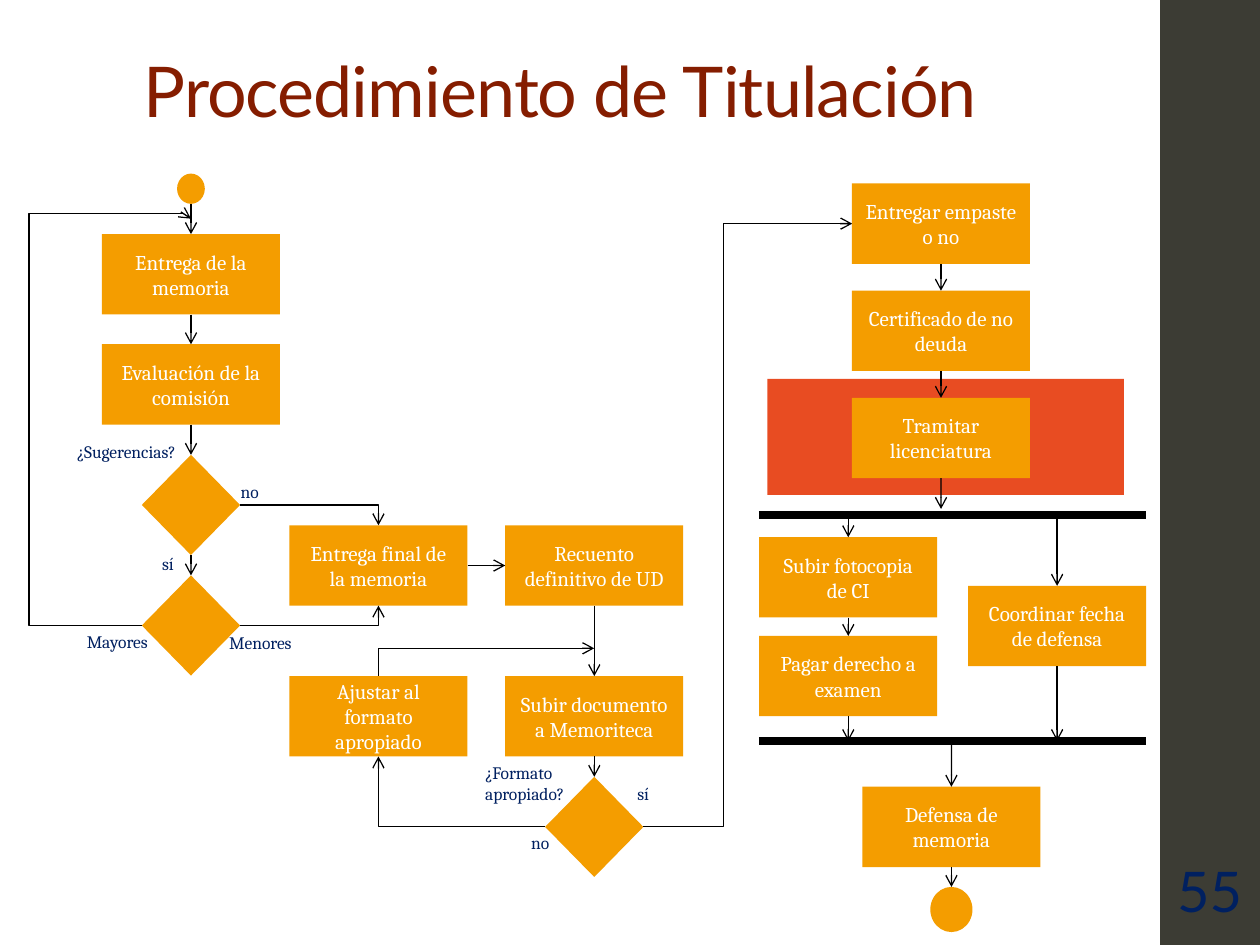
"""Build the degree procedure flowchart slide."""
from dataclasses import dataclass

import pptx
import pptx.dml.color
import pptx.enum.shapes
import pptx.enum.text
import pptx.oxml
import pptx.oxml.ns
import pptx.util

Cm, Pt = pptx.util.Cm, pptx.util.Pt
SHAPES = pptx.enum.shapes.MSO_SHAPE
CONNECTORS = pptx.enum.shapes.MSO_CONNECTOR
ANCHOR = pptx.enum.text.MSO_ANCHOR
ALIGN = pptx.enum.text.PP_ALIGN
AUTO_SIZE = pptx.enum.text.MSO_AUTO_SIZE

COLOURS = {"bar": "3C3C34", "title": "851D00", "highlight": "E84C22", "node": "F49D00",
           "label": "002060", "line": "000000", "white": "FFFFFF"}
FONTS = {
    "title": {"size": Pt(40), "name": "Lato"},
    "number": {"size": Pt(32), "name": "Lato"},
    "node": {"size": Pt(12), "name": "Cambria"},
    "label": {"size": Pt(10), "name": "Cambria"},
}
TOP, LEFT, BOTTOM, RIGHT = range(4)
BOX, DIAMOND = (3.59, 1.62), (1.98, 2.02)
MEMORY, FINAL, COUNT, PAPERWORK, EXAM, DATE, DEFENCE = 3.85, 7.63, 11.98, 18.97, 17.1, 21.31, 19.18
FORK, JOIN = 10.39, 14.94


@dataclass
class Node:
    name: str
    centre: float
    top: float
    text: str = ""
    kind: object = SHAPES.RECTANGLE
    size: tuple = BOX


@dataclass
class Label:
    text: str
    left: float
    top: float
    width: float
    height: float = 0.69
    wrap: bool = False


@dataclass
class Straight:
    begin: object
    end: object
    sides: tuple = (BOTTOM, TOP)


@dataclass
class Bent:
    preset: str
    begin: tuple
    end: tuple
    adjustments: tuple = ()
    arrow_at: str = "tailEnd"


NODES = [
    Node("submit", MEMORY, 4.72, "Entrega de la memoria"),
    Node("review", MEMORY, 6.94, "Evaluación de la comisión"),
    Node("suggestions", MEMORY, 9.17, kind=SHAPES.DIAMOND, size=DIAMOND),
    Node("severity", MEMORY, 11.6, kind=SHAPES.DIAMOND, size=DIAMOND),
    Node("start", MEMORY, 3.5, kind=SHAPES.OVAL, size=(0.56, 0.61)),
    Node("final", FINAL, 10.59, "Entrega final de la memoria"),
    Node("count", COUNT, 10.59, "Recuento definitivo de UD"),
    Node("degree", PAPERWORK, 8.02, "Tramitar licenciatura"),
    Node("upload", COUNT, 13.63, "Subir documento a Memoriteca"),
    Node("adjust", FINAL, 13.63, "Ajustar al formato apropiado"),
    Node("format", COUNT, 15.66, kind=SHAPES.DIAMOND, size=DIAMOND),
    Node("certificate", PAPERWORK, 5.86, "Certificado de no deuda"),
    Node("copy", EXAM, 10.83, "Subir fotocopia de CI"),
    Node("fee", EXAM, 12.82, "Pagar derecho a examen"),
    Node("binding", PAPERWORK, 3.7, "Entregar empaste o no"),
    Node("date", DATE, 11.81, "Coordinar fecha de defensa"),
    Node("defence", DEFENCE, 15.86, "Defensa de memoria"),
    Node("finish", DEFENCE, 17.88, kind=SHAPES.OVAL, size=(0.85, 0.91)),
    Node("finish core", DEFENCE, 17.98, kind=SHAPES.OVAL, size=(0.64, 0.71)),
]
LABELS = [
    Label("¿Sugerencias?", 1.3, 8.76, 2.87),
    Label("sí", 3.02, 11.02, 0.79),
    Label("Mayores", 1.5, 12.6, 1.93),
    Label("Menores", 4.37, 12.62, 1.93),
    Label("no", 4.6, 9.58, 0.91),
    Label("sí", 12.6, 15.65, 0.79),
    Label("no", 10.46, 16.64, 0.91),
    Label("¿Formato apropiado?", 9.53, 15.24, 2.36, 1.12, True),
]
STRAIGHTS = [
    Straight((MEMORY, 4.11), "submit"),
    Straight("submit", "review"),
    Straight("review", "suggestions"),
    Straight("suggestions", "severity"),
    Straight("final", "count", (RIGHT, LEFT)),
    Straight("count", "upload"),
    Straight("upload", "format"),
    Straight("binding", "certificate"),
    Straight("certificate", "degree"),
    Straight("degree", (PAPERWORK, 10.26)),
    Straight((EXAM, FORK), "copy"),
    Straight((DATE, FORK), "date"),
    Straight("copy", "fee"),
    Straight("fee", (EXAM, JOIN)),
    Straight("date", (DATE, JOIN)),
    Straight((DEFENCE, JOIN), "defence"),
    Straight("defence", "finish"),
]
BENTS = [
    Bent("bentConnector4", (2.86, 12.61), (MEMORY, 4.41), (-229500, 101200)),
    Bent("bentConnector2", (4.84, 10.18), (FINAL, 10.59)),
    Bent("bentConnector2", (4.84, 12.61), (FINAL, 12.21)),
    Bent("bentConnector2", (10.99, 16.67), (FINAL, 15.25)),
    Bent("bentConnector2", (COUNT, 13.07), (FINAL, 13.63), arrow_at="headEnd"),
    Bent("bentConnector3", (12.97, 16.67), (17.18, 4.51), (38400,)),
]


def colour(name: str):
    """Return a named colour."""
    return pptx.dml.color.RGBColor.from_string(COLOURS[name])


def write(frame, text: str, style: str, tint: str):
    """Write one styled paragraph and return it."""
    para = frame.paragraphs[0]
    span = para.add_run()
    span.text = text
    for key, value in FONTS[style].items():
        setattr(span.font, key, value)
    span.font.color.rgb = colour(tint)
    return para


def add_block(page, kind, left: float, top: float, size: tuple, tint: str):
    """Add a flat filled shape."""
    block = page.shapes.add_shape(kind, Cm(left), Cm(top), Cm(size[0]), Cm(size[1]))
    block.shadow.inherit = False
    block.fill.solid()
    block.fill.fore_color.rgb = colour(tint)
    block.line.fill.background()
    return block


def add_node(page, node: Node):
    """Add one flowchart step."""
    block = add_block(page, node.kind, node.centre - node.size[0] / 2, node.top, node.size, "node")
    if node.text:
        block.text_frame.vertical_anchor = ANCHOR.MIDDLE
        write(block.text_frame, node.text, "node", "white").alignment = ALIGN.CENTER
    return block


def add_label(page, label: Label, style: str = "label") -> None:
    """Add a free-standing text."""
    box = page.shapes.add_textbox(Cm(label.left), Cm(label.top), Cm(label.width), Cm(label.height))
    box.text_frame.word_wrap = label.wrap
    box.text_frame.auto_size = AUTO_SIZE.SHAPE_TO_FIT_TEXT
    write(box.text_frame, label.text, style, "label")


def add_line(page, kind, begin: tuple, end: tuple, width: float = 0.75, arrow_at: str = "tailEnd"):
    """Add a black connector, with an arrowhead if an end is named."""
    line = page.shapes.add_connector(kind, *map(Cm, begin + end))
    line.line.width = Pt(width)
    line.line.color.rgb = colour("line")
    properties = line._element.spPr
    if arrow_at:
        head = pptx.oxml.ns.qn(f"a:{arrow_at}")
        line.line._get_or_add_ln().append(properties.makeelement(head, {"type": "arrow"}))
    properties.append(properties.makeelement(pptx.oxml.ns.qn("a:effectLst"), {}))
    return line


def add_straight(page, link: Straight, blocks: dict) -> None:
    """Add a straight arrow and join it to the named steps."""
    places = [(0, 0) if isinstance(place, str) else place for place in (link.begin, link.end)]
    line = add_line(page, CONNECTORS.STRAIGHT, *places)
    joins = (line.begin_connect, line.end_connect)
    for join, place, side in zip(joins, (link.begin, link.end), link.sides):
        if isinstance(place, str):
            join(blocks[place], side)


def add_bent(page, link: Bent) -> None:
    """Add an elbow arrow with its preset and adjustments."""
    line = add_line(page, CONNECTORS.ELBOW, link.begin, link.end, arrow_at=link.arrow_at)
    geometry = line._element.spPr.find(pptx.oxml.ns.qn("a:prstGeom"))
    geometry.set("prst", link.preset)
    values = geometry.find(pptx.oxml.ns.qn("a:avLst"))
    for index, value in enumerate(link.adjustments, 1):
        guide = {"name": f"adj{index}", "fmla": f"val {value}"}
        values.append(values.makeelement(pptx.oxml.ns.qn("a:gd"), guide))


def add_title(page, text: str) -> None:
    """Place and format the slide title."""
    title = page.shapes.title
    places = {"left": 2.64, "top": 1.02, "width": 20.19, "height": 3.68}
    for key, value in places.items():
        setattr(title, key, Cm(value))
    title.text_frame.vertical_anchor = ANCHOR.TOP
    title.text_frame.auto_size = AUTO_SIZE.NONE
    para = write(title.text_frame, text, "title", "title")
    para.alignment, para.line_spacing = ALIGN.LEFT, 0.9
    para.runs[0].font._element.set("spc", "-50")


def main() -> None:
    """Build and save the deck."""
    deck = pptx.Presentation()
    deck.slide_width, deck.slide_height = Cm(25.4), Cm(19.05)
    page = deck.slides.add_slide(deck.slide_layouts[5])
    add_block(page, SHAPES.RECTANGLE, 23.39, 0, (2.01, 19.05), "bar")
    add_title(page, "Procedimiento de Titulación")
    add_block(page, SHAPES.RECTANGLE, 15.47, 7.64, (7.19, 2.34), "highlight")
    blocks = {node.name: add_node(page, node) for node in NODES}
    for height in (FORK, JOIN):
        add_line(page, CONNECTORS.STRAIGHT, (15.3, height), (23.1, height), 4.5, "")
    for link in STRAIGHTS:
        add_straight(page, link, blocks)
    for link in BENTS:
        add_bent(page, link)
    for label in LABELS:
        add_label(page, label)
    add_label(page, Label("55", 23.48, 17.15, 1.92, 1.6), "number")
    deck.save("out.pptx")


if __name__ == "__main__":
    main()
